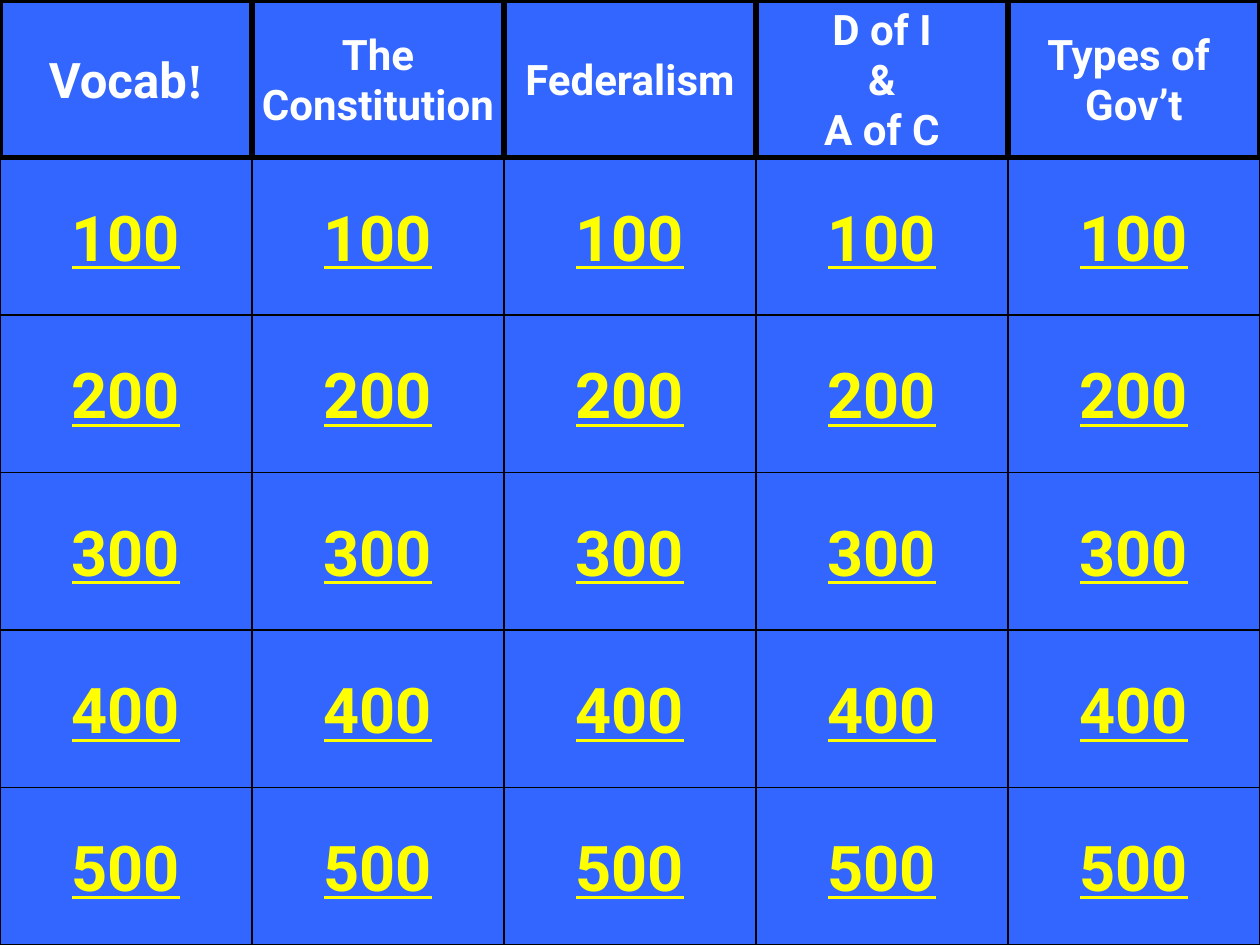
import pptx
import pptx.dml.color
import pptx.enum.shapes
import pptx.enum.text
import pptx.util

Pt = pptx.util.Pt
RGBColor = pptx.dml.color.RGBColor
MSO_SHAPE = pptx.enum.shapes.MSO_SHAPE

NAVY = RGBColor(0x00, 0x00, 0x99)
BLUE = RGBColor(0x33, 0x66, 0xFF)
BLACK = RGBColor(0x00, 0x00, 0x00)
WHITE = RGBColor(0xFF, 0xFF, 0xFF)
YELLOW = RGBColor(0xFF, 0xFF, 0x00)

CATEGORIES = [
    (["Vocab"], 28),
    (["The", "Constitution"], 24),
    (["Federalism"], 24),
    (["D of I", "&", "A of C"], 24),
    (["Types of ", "Gov’t"], 24),
]
POINTS = [100, 200, 300, 400, 500]


class QuizBoard:
    font_name = "Roboto"
    mark_font_name = "Times New Roman"
    cell_width = 144
    cell_height = 90

    def __init__(self, slide):
        self.slide = slide
        slide.background.fill.solid()
        slide.background.fill.fore_color.rgb = NAVY

    def cell(self, kind, column, row, border, lines, size, color, underline=None):
        cell = self.slide.shapes.add_shape(
            kind,
            Pt(column * self.cell_width),
            Pt(row * self.cell_height),
            Pt(self.cell_width),
            Pt(self.cell_height),
        )
        cell.shadow.inherit = False
        cell.fill.solid()
        cell.fill.fore_color.rgb = BLUE
        cell.line.color.rgb = BLACK
        cell.line.width = Pt(border)
        frame = cell.text_frame
        frame.word_wrap = False
        frame.vertical_anchor = pptx.enum.text.MSO_ANCHOR.MIDDLE
        frame.text = "\n".join(lines)
        for paragraph in frame.paragraphs:
            paragraph.alignment = pptx.enum.text.PP_ALIGN.CENTER
            paragraph.font.name = self.font_name
            paragraph.font.size = Pt(size)
            paragraph.font.bold = True
            paragraph.font.underline = underline
            paragraph.font.color.rgb = color
        return cell

    def category(self, column, lines, size):
        return self.cell(MSO_SHAPE.RECTANGLE, column, 0, 3, lines, size, WHITE)

    def points(self, column, row, value):
        return self.cell(
            MSO_SHAPE.ACTION_BUTTON_CUSTOM, column, row, 0.75,
            [str(value)], 36, YELLOW, underline=True,
        )

    def closing_mark(self, category, mark):
        run = category.text_frame.paragraphs[-1].add_run()
        run.text = mark
        run.font.name = self.mark_font_name


def main():
    deck = pptx.Presentation()
    deck.slide_width = Pt(720)
    deck.slide_height = Pt(540)
    board = QuizBoard(deck.slides.add_slide(deck.slide_layouts[6]))

    for column in range(len(CATEGORIES)):
        for row, value in enumerate(POINTS, start=1):
            board.points(column, row, value)

    headings = [
        board.category(column, lines, size)
        for column, (lines, size) in enumerate(CATEGORIES)
    ]
    board.closing_mark(headings[0], "!")

    deck.save("out.pptx")


if __name__ == "__main__":
    main()
